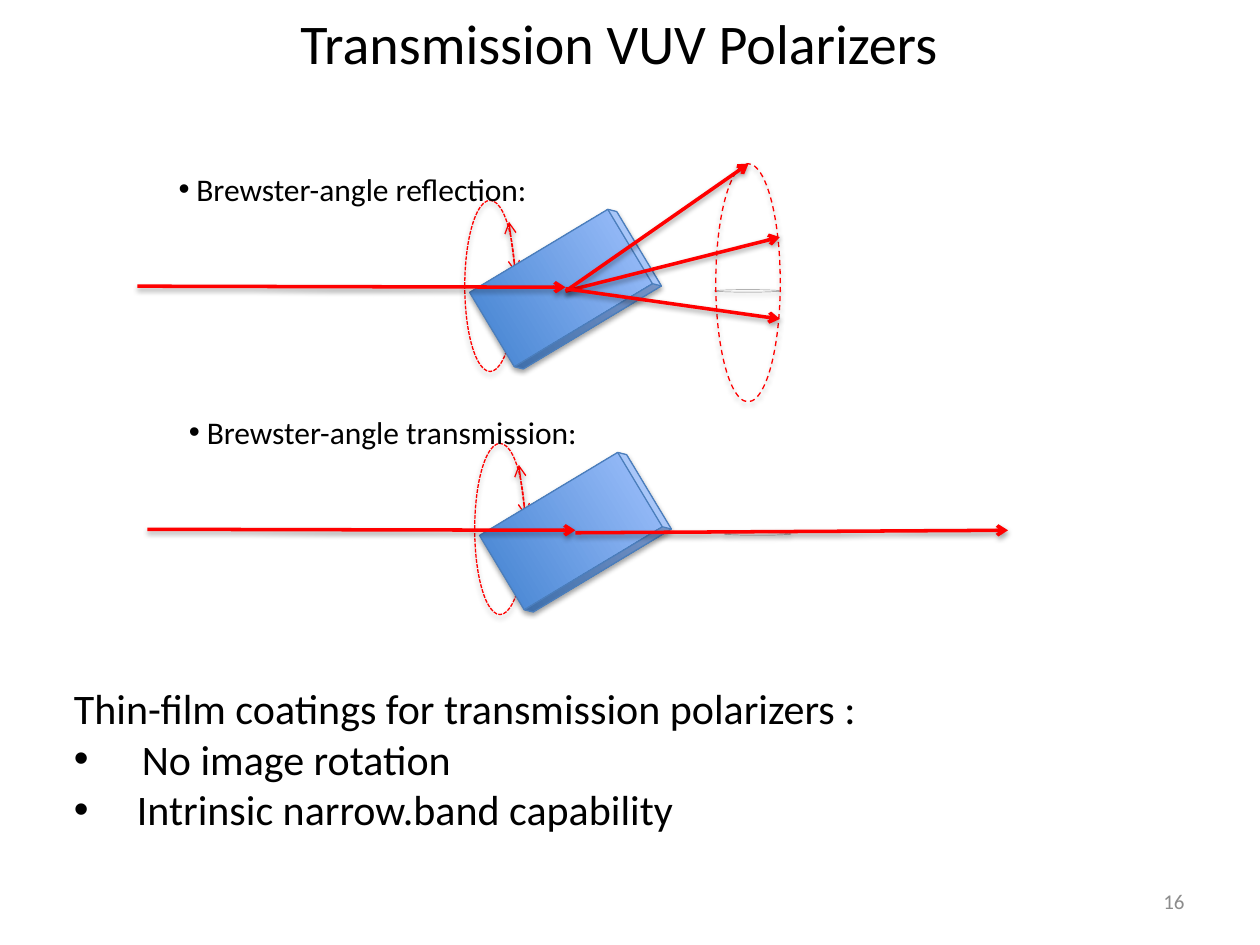
from lxml.etree import SubElement
from pptx import Presentation
from pptx.dml.color import RGBColor
from pptx.enum.dml import MSO_LINE
from pptx.enum.shapes import MSO_CONNECTOR, MSO_SHAPE
from pptx.enum.text import MSO_ANCHOR, MSO_AUTO_SIZE, PP_ALIGN
from pptx.oxml.ns import qn
from pptx.util import Cm, Pt

THEME = {
    "font": "Calibri", "ink": "000000", "beam": "FF0000", "edge": "4B7EBC",
    "mute": "8C8C8C", "dark": "3F80CE", "light": "A4C4FF",
    "title": 32, "body": 24, "label": 18, "note": 12,
    "thick": 2, "thin": 0.75, "hair": 0.25,
}
GROW = {"auto_size": MSO_AUTO_SIZE.SHAPE_TO_FIT_TEXT, "word_wrap": False}
MID = {"vertical_anchor": MSO_ANCHOR.MIDDLE, "word_wrap": True}

# Each text: place, size, ink, frame format, align, (words, bullet indent, hang)
TEXTS = [
    ((1.88, -0.25, 21.21, 2.21), "title", "ink", MID, PP_ALIGN.CENTER,
     [("Transmission VUV Polarizers", 0, 0)]),
    ((1.24, 13.64, 16.43, 3.33), "body", "ink", GROW, PP_ALIGN.LEFT,
     [("Thin-film coatings for transmission polarizers :", 0, 0),
      ("No image rotation", 1.37, 1.37),
      ("Intrinsic narrow.band capability", 1.27, 1.27)]),
    ((3.35, 3.3, 7.65, 1.02), "label", "ink", GROW, PP_ALIGN.LEFT,
     [("Brewster-angle reflection:", 0.36, 0.36)]),
    ((3.56, 8.2, 8.43, 1.02), "label", "ink", GROW, PP_ALIGN.LEFT,
     [("Brewster-angle transmission:", 0.36, 0.36)]),
    ((18.21, 17.65, 5.92, 1.02), "note", "mute", MID, PP_ALIGN.RIGHT,
     [("16", 0, 0)]),
]
SWING = (10.26, 4.47, 10.39, 5.49)
RING = (9.37, 4.04, 1.02, 3.45)
PLATE = (10.46, 4.14, 1.88, 3.38)
DISC = (14.4, 5.84, 1.35, 0.05)
CONE = (14.43, 3.3, 1.3, 4.8)
BEAM = (2.77, 5.77, 11.4, 5.79)
SETUPS = [
    {"shift": (0, 0), "cone": True,
     "rays": [(11.4, 5.87, 15.72, 4.78), (11.4, 5.87, 15.09, 3.3),
              (11.4, 5.82, 15.72, 6.43)]},
    {"shift": (0.2, 4.9), "cone": False,
     "rays": [(11.4, 5.84, 20.12, 5.79)]},
]


def tint(name):
    return RGBColor.from_string(THEME[name])


def apply(thing, form):
    for key, val in form.items():
        setattr(thing, key, val)


def stroke(shape, color, width, dash=None, ends=()):
    shape.line.color.rgb = tint(color)
    apply(shape.line, {"width": Pt(THEME[width]), "dash_style": dash})
    props = shape.element.spPr
    for end in ends:
        SubElement(props.find(qn("a:ln")), qn("a:" + end), type="arrow")
    glow = SubElement(SubElement(props, qn("a:effectLst")), qn("a:outerShdw"),
                      blurRad=str(Pt(3.1)), dist=str(Pt(1.6)),
                      dir="5400000", rotWithShape="0")
    shade = SubElement(glow, qn("a:srgbClr"), val=THEME["ink"])
    SubElement(shade, qn("a:alpha"), val="36000")


def arrow(slide, ends, shift, width, dash=None, tips=("tailEnd",)):
    dx, dy = shift
    x, y, u, v = ends
    line = slide.shapes.add_connector(
        MSO_CONNECTOR.STRAIGHT, Cm(x + dx), Cm(y + dy), Cm(u + dx), Cm(v + dy))
    stroke(line, "beam", width, dash, tips)


def solid(slide, kind, place, shift, color, width, dash=None):
    x, y, w, h = place
    shape = slide.shapes.add_shape(
        kind, Cm(x + shift[0]), Cm(y + shift[1]), Cm(w), Cm(h))
    shape.fill.background()
    stroke(shape, color, width, dash)
    return shape


def setup(slide, shift, rays, cone):
    oval = MSO_SHAPE.OVAL
    dots = MSO_LINE.SQUARE_DOT
    arrow(slide, SWING, shift, "thin", dots, ("headEnd", "tailEnd"))
    solid(slide, oval, RING, shift, "beam", "thin", dots)
    plate = solid(slide, MSO_SHAPE.CUBE, PLATE, shift, "edge", "thin")
    plate.rotation = 59
    plate.adjustments[0] = 0.07
    plate.fill.gradient()
    plate.fill.gradient_angle = 90
    for stop, name in zip(plate.fill.gradient_stops, ("dark", "light")):
        stop.color.rgb = tint(name)
    solid(slide, oval, DISC, shift, "mute", "hair")
    if cone:
        solid(slide, oval, CONE, shift, "beam", "thin", MSO_LINE.DASH)
    for ray in [BEAM] + rays:
        arrow(slide, ray, shift, "thick")


def write(slide, place, size, color, form, align, lines):
    frame = slide.shapes.add_textbox(*map(Cm, place)).text_frame
    apply(frame, form)
    for i, (words, left, hang) in enumerate(lines):
        para = frame.add_paragraph() if i else frame.paragraphs[0]
        para.text = words
        para.alignment = align
        if left:
            props = para._p.get_or_add_pPr()
            props.set("marL", str(Cm(left)))
            props.set("indent", str(-Cm(hang)))
            SubElement(props, qn("a:buFont"), typeface="Arial")
            SubElement(props, qn("a:buChar"), char="•")
        apply(para.font, {"name": THEME["font"], "size": Pt(THEME[size])})
        para.font.color.rgb = tint(color)


def main():
    """Build the slide on transmission polarizers."""
    deck = Presentation()
    apply(deck, {"slide_width": Cm(25.4), "slide_height": Cm(19.05)})
    slide = deck.slides.add_slide(deck.slide_layouts[6])
    for item in SETUPS:
        setup(slide, **item)
    for text in TEXTS:
        write(slide, *text)
    deck.save("out.pptx")


if __name__ == "__main__":
    main()
